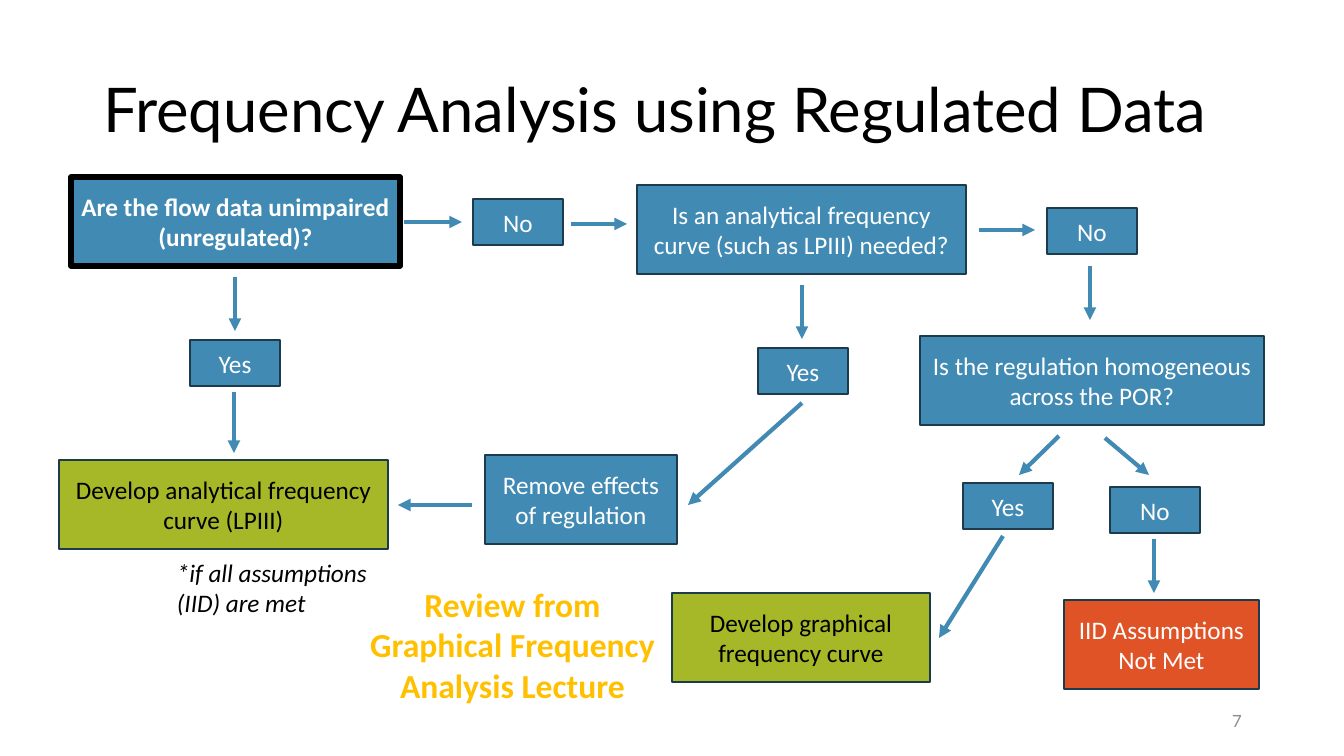
from pptx import Presentation
from pptx.dml.color import RGBColor
from pptx.enum.shapes import MSO_CONNECTOR, MSO_SHAPE
from pptx.enum.text import MSO_ANCHOR, MSO_AUTO_SIZE, PP_ALIGN
from pptx.oxml.ns import qn
from pptx.util import Emu, Pt
from lxml.etree import SubElement

COLORS = {
    "black": "000000", "white": "FFFFFF", "blue": "418AB3", "navy": "1C3C4E",
    "green": "A6B727", "red": "DF5327", "gold": "FFC000", "gray": "8C8C8C",
}
EMU_PER_PX = 914400 / 100.8
BOX_HEIGHT = 89
ANSWER_WIDTH, ANSWER_HEIGHT = 90, 46

QUESTIONS = [
    (637, 185, 329, "Is an analytical frequency curve (such as LPIII) needed?"),
    (920, 336, 344, "Is the regulation homogeneous across the POR?"),
    (485, 455, 192, "Remove effects of regulation"),
]
OUTCOMES = [
    (59, 460, 329, "Develop analytical frequency curve (LPIII)", "green", "black"),
    (672, 593, 258, "Develop graphical frequency curve", "green", "black"),
    (1064, 600, 195, "IID Assumptions Not Met", "red", "white"),
]
ANSWERS = [
    (190, 340, "Yes"), (758, 348, "Yes"), (963, 483, "Yes"),
    (473, 199, "No"), (1047, 208, "No"), (1110, 487, "No"),
]
ARROWS = [
    (235, 277, 235, 331), (234, 392, 234, 453),
    (404, 222, 462, 222), (571, 224, 627, 224),
    (802, 285, 802, 339), (802, 403, 688, 505), (472, 505, 398, 505),
    (979, 230, 1035, 230), (1090, 266, 1090, 320),
    (1059, 436, 1019, 475), (1105, 438, 1149, 475),
    (1003, 536, 939, 638), (1154, 539, 1154, 593),
]


def px(*lengths):
    return [Emu(round(length * EMU_PER_PX)) for length in lengths]


def color(name):
    return RGBColor.from_string(COLORS[name])


class FlowSlide:
    body_font = "Calibri"
    title_font = "Lato"

    def __init__(self, presentation):
        self.slide = presentation.slides.add_slide(presentation.slide_layouts[5])

    def set_text(self, shape, text, size=18, ink="white", font=body_font,
                 align=PP_ALIGN.CENTER, anchor=MSO_ANCHOR.MIDDLE, bold=False, italic=False):
        frame = shape.text_frame
        frame.text = text
        frame.word_wrap = True
        frame.auto_size = MSO_AUTO_SIZE.NONE
        frame.vertical_anchor = anchor
        paragraph = frame.paragraphs[0]
        paragraph.alignment = align
        paragraph.font.name = font
        paragraph.font.size = Pt(size)
        paragraph.font.bold = bold
        paragraph.font.italic = italic
        paragraph.font.color.rgb = color(ink)
        return paragraph

    def title(self, text, left, top, width, height):
        shape = self.slide.shapes.title
        shape.left, shape.top, shape.width, shape.height = px(left, top, width, height)
        paragraph = self.set_text(shape, text, 44, "black", self.title_font, PP_ALIGN.LEFT)
        paragraph.line_spacing = 0.9

    def box(self, left, top, width, text, fill="blue", ink="white",
            height=BOX_HEIGHT, border="navy", border_width=1, bold=False):
        shape = self.slide.shapes.add_shape(
            MSO_SHAPE.RECTANGLE, *px(left, top, width, height))
        shape.shadow.inherit = False
        shape.fill.solid()
        shape.fill.fore_color.rgb = color(fill)
        shape.line.color.rgb = color(border)
        shape.line.width = Pt(border_width)
        self.set_text(shape, text, ink=ink, bold=bold)

    def answer(self, left, top, text):
        self.box(left, top, ANSWER_WIDTH, text, height=ANSWER_HEIGHT)

    def arrow(self, *ends):
        connector = self.slide.shapes.add_connector(MSO_CONNECTOR.STRAIGHT, *px(*ends))
        connector.line.color.rgb = color("blue")
        connector.line.width = Pt(3)
        properties = connector._element.spPr
        SubElement(properties.find(qn("a:ln")), qn("a:tailEnd"), type="triangle")
        SubElement(properties, qn("a:effectLst"))

    def label(self, left, top, width, height, text, **style):
        shape = self.slide.shapes.add_textbox(*px(left, top, width, height))
        self.set_text(shape, text, **style)


def main():
    presentation = Presentation()
    presentation.slide_width, presentation.slide_height = px(1344, 756)
    flow = FlowSlide(presentation)
    flow.title("Frequency Analysis using Regulated Data", 93, 40, 1159, 146)
    flow.label(950, 701, 302, 40, "7", size=12, ink="gray",
               font=flow.title_font, align=PP_ALIGN.RIGHT)
    flow.box(71, 177, 329, "Are the flow data unimpaired (unregulated)?",
             border="black", border_width=4, bold=True)
    for question in QUESTIONS:
        flow.box(*question)
    for outcome in OUTCOMES:
        flow.box(*outcome)
    for answer in ANSWERS:
        flow.answer(*answer)
    for arrow in ARROWS:
        flow.arrow(*arrow)
    flow.label(167, 552, 230, 72, "*if all assumptions (IID) are met", ink="black",
               align=PP_ALIGN.LEFT, anchor=MSO_ANCHOR.TOP, italic=True)
    flow.label(357, 579, 311, 132, "Review from Graphical Frequency Analysis Lecture",
               size=24, ink="gold", anchor=MSO_ANCHOR.TOP, bold=True)
    presentation.save("out.pptx")


if __name__ == "__main__":
    main()
